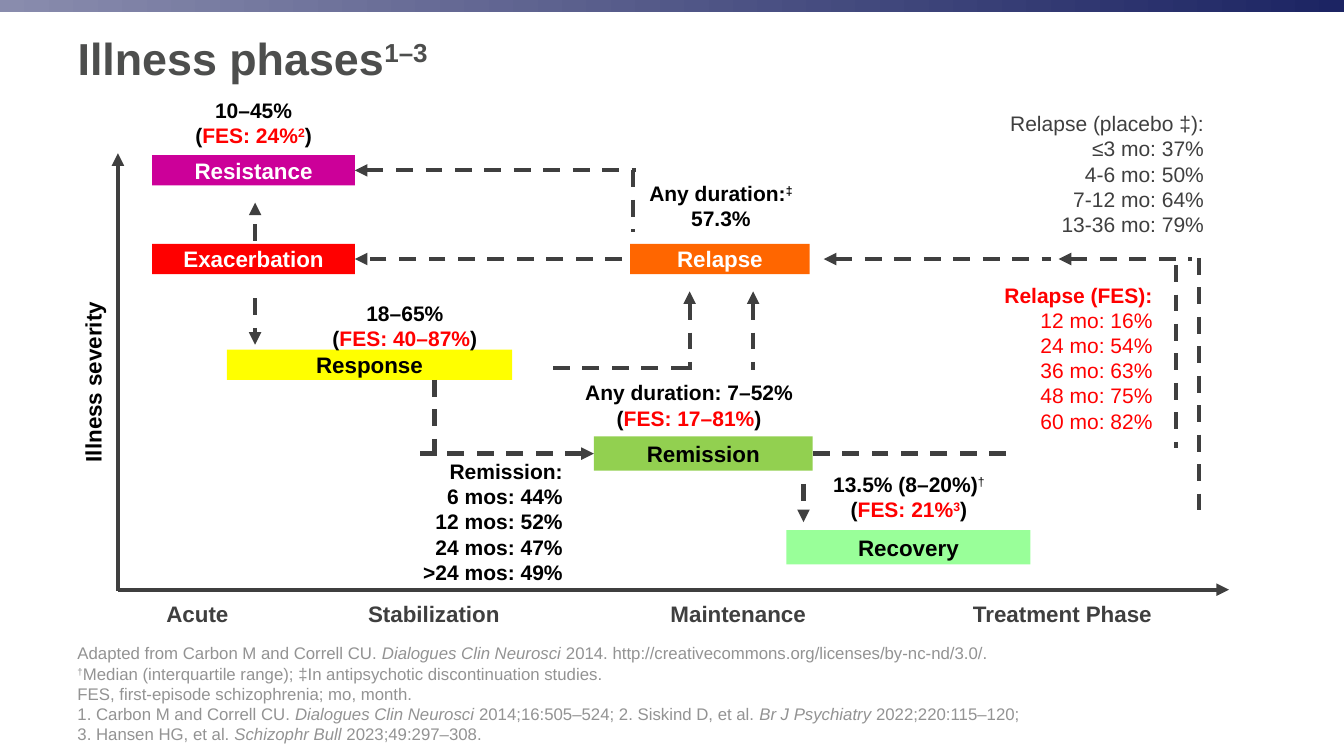
from lxml.etree import SubElement
from pptx import Presentation
from pptx.dml.color import RGBColor
from pptx.enum.dml import MSO_LINE
from pptx.enum.shapes import MSO_CONNECTOR, MSO_SHAPE
from pptx.enum.text import MSO_ANCHOR, PP_ALIGN
from pptx.oxml.ns import qn
from pptx.util import Inches, Pt


class Theme:
    font = "Arial"
    title, phase, label, note = 32, 16, 15, 12
    black, white, red = "000000", "FFFFFF", "FF0000"
    heading, line, muted = "4D4E4D", "3F3F3F", "939393"
    bar = ("898CAD", "1C2463")
    line_width = 3


# A run is plain text, or (text, flags): r red, ^ superscript, i italic, n not bold
TITLE = ["Illness phases", ("1–3", "^")]
SOURCES = [
    ["Adapted from Carbon M and Correll CU. ", ("Dialogues Clin Neurosci ", "i"),
     "2014. http://creativecommons.org/licenses/by-nc-nd/3.0/."],
    [("†", "^"), "Median (interquartile range); ‡In antipsychotic discontinuation studies."],
    ["FES, first-episode schizophrenia; mo, month."],
    ["1. Carbon M and Correll CU. ", ("Dialogues Clin Neurosci ", "i"),
     "2014;16:505–524; 2. Siskind D, et al. ", ("Br J Psychiatry ", "i"),
     "2022;220:115–120;"],
    ["3. Hansen HG, et al. ", ("Schizophr Bull", "i"), " 2023;49:297–308."],
]
TREATMENT_PHASES = ["Acute", "Stabilization", "Maintenance", "Treatment Phase"]

# name: (left, top, width, height), fill, text colour
STATES = {
    "Resistance": ((1.51, 1.54, 2.01, 0.3), "CC0099", Theme.white),
    "Exacerbation": ((1.51, 2.42, 2.01, 0.3), "FF0000", Theme.white),
    "Response": ((2.25, 3.47, 2.83, 0.3), "FFFF00", Theme.black),
    "Relapse": ((6.25, 2.42, 1.78, 0.3), "FF6600", Theme.white),
    "Remission": ((5.89, 4.33, 2.17, 0.34), "92D050", Theme.black),
    "Recovery": ((7.8, 5.26, 2.42, 0.34), "99FF99", Theme.black),
}

# (left, top, width, height), paragraphs
RATES = [
    ((1.51, 0.92, 2.01, 0.61),
     [["10–45%"], ["(", ("FES: 24%", "r"), ("2", "r^"), ")"]]),
    ((2.94, 2.93, 2.15, 0.61), [["18–65%"], ["(", ("FES: 40–87%", "r"), ")"]]),
    ((6.27, 1.74, 1.76, 0.61), [["Any duration:", ("‡", "^")], ["57.3%"]]),
    ((5.1, 3.72, 3.47, 0.61),
     [["Any duration: 7–52%"], ["(", ("FES: 17–81%", "r"), ")"]]),
    ((8.05, 4.63, 1.93, 0.61),
     [["13.5% (8–20%)", ("†", "n^")], ["(", ("FES: 21%", "r"), ("3", "r^"), ")"]]),
]

# (left, top, width, height), colour, bold heading, bold rows, heading, rows
TIMELINES = [
    ((9.51, 1.05, 2.53, 1.36), Theme.line, False, False, "Relapse (placebo ‡):",
     ["≤3 mo: 37%", "4-6 mo: 50%", "7-12 mo: 64%", "13-36 mo: 79%"]),
    ((9.67, 2.75, 1.86, 1.62), Theme.red, True, False, "Relapse (FES):",
     ["12 mo: 16%", "24 mo: 54%", "36 mo: 63%", "48 mo: 75%", "60 mo: 82%"]),
    ((3.31, 4.5, 2.37, 1.36), Theme.black, True, True, "Remission:",
     ["6 mos: 44%", "12 mos: 52%", "24 mos: 47%", ">24 mos: 49%"]),
]

AXES = [(1.17, 5.86, 1.17, 1.52), (1.17, 5.85, 12.19, 5.85)]

# (x1, y1, x2, y2), arrowhead end, joined state at start, joined state at end
TOP, LEFT, BOTTOM, RIGHT = range(4)
PATHS = [
    ((2.53, 2.39, 2.53, 2.01), "tail", None, None),
    ((2.53, 2.96, 2.53, 3.42), "tail", None, None),
    ((3.52, 1.69, 6.31, 1.69), "head", ("Resistance", RIGHT), None),
    ((6.28, 1.69, 6.28, 2.3), None, None, None),
    ((6.17, 2.57, 3.52, 2.57), "tail", None, ("Exacerbation", RIGHT)),
    ((4.31, 3.77, 4.31, 4.54), None, None, None),
    ((5.89, 4.5, 4.17, 4.5), "head", ("Remission", LEFT), None),
    ((6.82, 3.65, 5.4, 3.65), None, None, None),
    ((6.84, 2.89, 6.84, 3.67), "head", None, None),
    ((7.47, 2.89, 7.47, 3.67), "head", None, None),
    ((7.97, 4.8, 7.97, 5.18), "tail", None, None),
    ((9.98, 4.5, 8.06, 4.5), None, None, ("Remission", RIGHT)),
    ((8.17, 2.57, 10.42, 2.57), "head", None, None),
    ((10.5, 2.57, 11.82, 2.57), "head", None, None),
    ((11.66, 2.63, 11.66, 4.44), None, None, None),
    ((11.89, 2.56, 11.89, 5.17), None, None, None),
]


def inches(values):
    return [Inches(v) for v in values]


def rgb(color):
    return RGBColor.from_string(color)


def add_runs(p, runs, size, color, bold=False):
    for run in runs:
        text, flags = (run, "") if isinstance(run, str) else run
        r = p.add_run()
        r.text = text
        r.font.name, r.font.size = Theme.font, Pt(size)
        r.font.bold = bold and "n" not in flags
        r.font.italic = "i" in flags
        r.font.color.rgb = rgb(Theme.red if "r" in flags else color)
        if "^" in flags:
            r._r.get_or_add_rPr().set("baseline", "30000")


def set_frame(sp, anchor):
    tf = sp.text_frame
    tf.word_wrap, tf.vertical_anchor = True, anchor
    return tf


def add_text(slide, box, paragraphs, size, color, align, bold=True, anchor=MSO_ANCHOR.TOP):
    sp = slide.shapes.add_textbox(*inches(box))
    tf = set_frame(sp, anchor)
    for i, runs in enumerate(paragraphs):
        p = tf.add_paragraph() if i else tf.paragraphs[0]
        p.alignment = align
        add_runs(p, runs, size, color, bold)
    return sp


def add_rect(slide, box):
    sp = slide.shapes.add_shape(MSO_SHAPE.RECTANGLE, *inches(box))
    sp.shadow.inherit = False
    sp.line.fill.background()
    return sp


def add_state(slide, name, box, fill, color):
    sp = add_rect(slide, box)
    sp.fill.solid()
    sp.fill.fore_color.rgb = rgb(fill)
    tf = set_frame(sp, MSO_ANCHOR.MIDDLE)
    tf.margin_left = tf.margin_right = Inches(0.07)
    tf.margin_top = tf.margin_bottom = Inches(0.03)
    p = tf.paragraphs[0]
    p.alignment = PP_ALIGN.CENTER
    add_runs(p, [name], Theme.phase, color, True)
    return sp


def add_line(slide, ends, arrow=None, dashed=True):
    cx = slide.shapes.add_connector(MSO_CONNECTOR.STRAIGHT, *inches(ends))
    cx.line.color.rgb = rgb(Theme.line)
    cx.line.width = Pt(Theme.line_width)
    if dashed:
        cx.line.dash_style = MSO_LINE.DASH
    if arrow:
        SubElement(cx.line._get_or_add_ln(), qn(f"a:{arrow}End"), type="triangle")
    SubElement(cx._element.spPr, qn("a:effectLst"))
    return cx


def add_phase_names(slide):
    """Write the names under the axis, three inches apart after the second."""
    sp = add_text(slide, (1.17, 5.9, 10.72, 0.37), [["\t".join(TREATMENT_PHASES)]],
                  Theme.phase, Theme.line, PP_ALIGN.LEFT, anchor=MSO_ANCHOR.MIDDLE)
    sp.text_frame.margin_left = Inches(0.48)
    tabs = SubElement(sp.text_frame.paragraphs[0]._p.get_or_add_pPr(), qn("a:tabLst"))
    for i in range(len(TREATMENT_PHASES) - 1):
        SubElement(tabs, qn("a:tab"), pos=str(Inches(2 + 3 * i)), algn="l")


def main():
    prs = Presentation()
    prs.slide_width, prs.slide_height = Inches(13.33), Inches(7.5)
    slide = prs.slides.add_slide(prs.slide_layouts[5])

    bar = add_rect(slide, (0, 0, 13.33, 0.12))
    bar.fill.gradient()
    bar.fill.gradient_angle = 0
    for stop, color in zip(bar.fill.gradient_stops, Theme.bar):
        stop.color.rgb = rgb(color)

    title = slide.shapes.title
    title.left, title.top, title.width, title.height = inches((0.67, 0.22, 11.75, 0.71))
    p = set_frame(title, MSO_ANCHOR.MIDDLE).paragraphs[0]
    p.alignment = PP_ALIGN.LEFT
    add_runs(p, TITLE, Theme.title, Theme.heading, True)

    for ends in AXES:
        add_line(slide, ends, "tail", dashed=False)
    severity = add_text(slide, (-1.13, 3.56, 4.1, 0.46), [["Illness severity"]], Theme.phase,
                        Theme.black, PP_ALIGN.CENTER, anchor=MSO_ANCHOR.MIDDLE)
    severity.rotation = 270
    add_phase_names(slide)

    states = {name: add_state(slide, name, *style) for name, style in STATES.items()}
    for ends, arrow, start, end in PATHS:
        cx = add_line(slide, ends, arrow)
        if start:
            cx.begin_connect(states[start[0]], start[1])
        if end:
            cx.end_connect(states[end[0]], end[1])

    for box, paragraphs in RATES:
        add_text(slide, box, paragraphs, Theme.label, Theme.black, PP_ALIGN.CENTER)
    for box, color, bold_heading, bold_rows, heading, rows in TIMELINES:
        head = (heading, "" if bold_heading else "n")
        body = [[(row, "" if bold_rows else "n")] for row in rows]
        add_text(slide, box, [[head], *body], Theme.label, color, PP_ALIGN.RIGHT)
    add_text(slide, (0.67, 6.95, 11.75, 0.48), SOURCES, Theme.note, Theme.muted,
             PP_ALIGN.LEFT, bold=False, anchor=MSO_ANCHOR.BOTTOM)
    prs.save("out.pptx")


if __name__ == "__main__":
    main()
